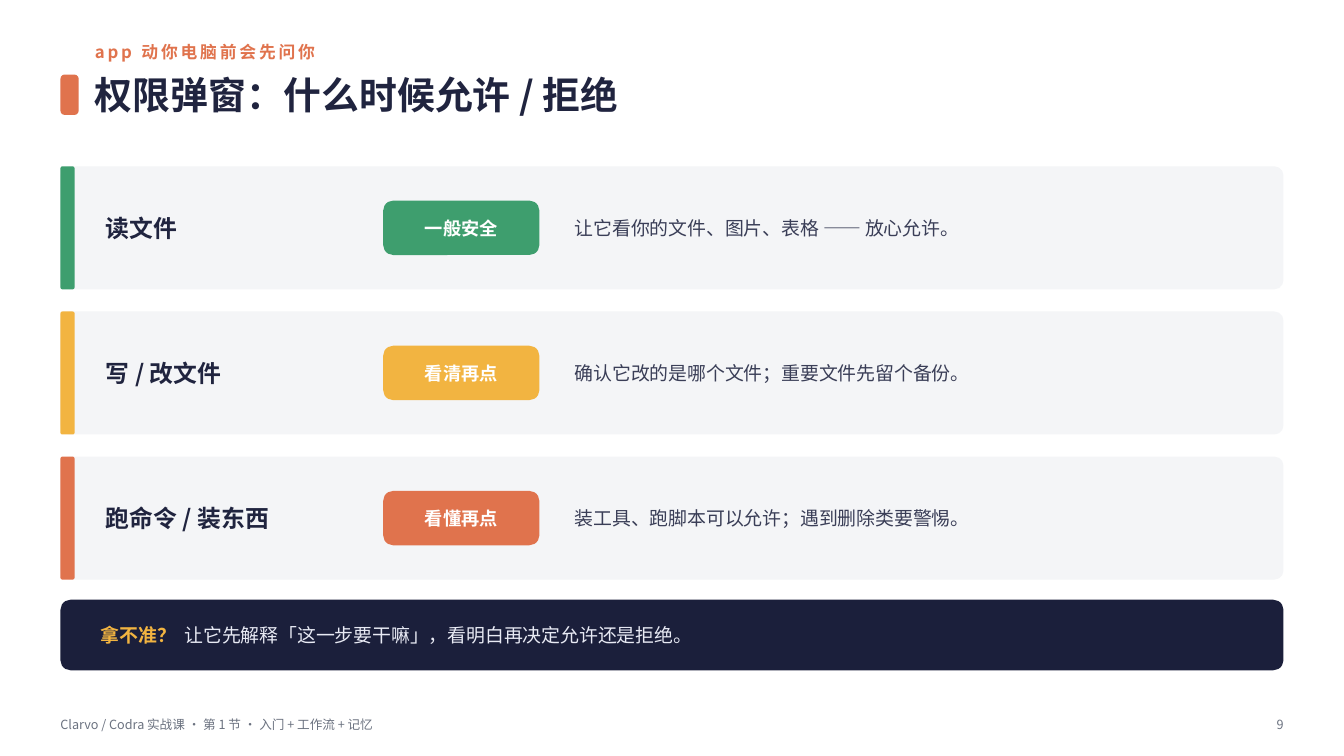
from lxml import etree
from pptx import Presentation
from pptx.dml.color import RGBColor
from pptx.enum.shapes import MSO_SHAPE
from pptx.enum.text import MSO_ANCHOR, PP_ALIGN
from pptx.oxml.ns import qn
from pptx.util import Inches, Pt

ROUNDED = MSO_SHAPE.ROUNDED_RECTANGLE
MIDDLE = MSO_ANCHOR.MIDDLE
LEFT, CENTER, RIGHT = PP_ALIGN.LEFT, PP_ALIGN.CENTER, PP_ALIGN.RIGHT

WHITE = RGBColor(0xFF, 0xFF, 0xFF)
INK = RGBColor(0x20, 0x24, 0x3F)
BODY = RGBColor(0x3A, 0x3E, 0x57)
MUTED = RGBColor(0x6B, 0x72, 0x80)
PANEL = RGBColor(0xF4, 0xF5, 0xF7)
NAVY = RGBColor(0x1B, 0x1F, 0x3B)
PALE = RGBColor(0xE8, 0xEA, 0xF4)
GREEN = RGBColor(0x3E, 0x9E, 0x6E)
AMBER = RGBColor(0xF2, 0xB4, 0x41)
ORANGE = RGBColor(0xE0, 0x73, 0x4D)

MARGIN = 0.6
CONTENT_WIDTH = 12.13
ROW_TOP, ROW_HEIGHT, ROW_PITCH = 1.65, 1.22, 1.44
BADGE_HEIGHT = 0.54

PERMISSIONS = [
    ("读文件", "一般安全", "让它看你的文件、图片、表格 —— 放心允许。", GREEN),
    ("写 / 改文件", "看清再点", "确认它改的是哪个文件；重要文件先留个备份。", AMBER),
    ("跑命令 / 装东西", "看懂再点", "装工具、跑脚本可以允许；遇到删除类要警惕。", ORANGE),
]


class SlideBuilder:
    font_name = "Noto Sans CJK SC"

    def __init__(self, slide):
        self.slide = slide

    def block(self, left, top, width, height, color, radius):
        shape = self.slide.shapes.add_shape(
            ROUNDED, Inches(left), Inches(top), Inches(width), Inches(height))
        shape.adjustments[0] = radius / min(width, height)
        shape.shadow.inherit = False
        shape.fill.solid()
        shape.fill.fore_color.rgb = color
        shape.line.fill.background()
        return shape

    def fill_text(self, shape, parts, size, bold=False, align=LEFT, spacing=0, tab=0):
        frame = shape.text_frame
        frame.word_wrap = True
        frame.vertical_anchor = MIDDLE
        frame.margin_left = frame.margin_right = 0
        frame.margin_top = frame.margin_bottom = 0
        paragraph = frame.paragraphs[0]
        paragraph.alignment = align
        if tab:
            stops = etree.SubElement(paragraph._p.get_or_add_pPr(), qn("a:tabLst"))
            etree.SubElement(stops, qn("a:tab"), pos=str(Inches(tab)), algn="l")
        font = paragraph.font
        font.name = self.font_name
        font.size = Pt(size)
        font.bold = bold
        if len(parts) == 1:
            font.color.rgb = parts[0][1]
        defaults = paragraph._p.pPr.find(qn("a:defRPr"))
        etree.SubElement(defaults, qn("a:ea"), typeface=self.font_name)
        if spacing:
            defaults.set("spc", str(spacing * 100))
        for words, color, *emphasis in parts:
            run = paragraph.add_run()
            run.text = words
            if len(parts) > 1:
                run.font.color.rgb = color
                run.font.bold = emphasis[0]

    def text(self, left, top, width, height, parts, size, **style):
        box = self.slide.shapes.add_textbox(
            Inches(left), Inches(top), Inches(width), Inches(height))
        self.fill_text(box, parts, size, **style)

    def permission(self, top, action, verdict, advice, color):
        self.block(MARGIN, top, CONTENT_WIDTH, ROW_HEIGHT, PANEL, 0.09)
        self.block(MARGIN, top, 0.14, ROW_HEIGHT, color, 0.02)
        self.text(1.05, top, 2.7, ROW_HEIGHT, [(action, INK)], 17, bold=True)
        badge_top = top + (ROW_HEIGHT - BADGE_HEIGHT) / 2
        badge = self.block(3.8, badge_top, 1.55, BADGE_HEIGHT, color, 0.1)
        self.fill_text(badge, [(verdict, WHITE)], 13, bold=True, align=CENTER)
        self.text(5.7, top, 6.73, ROW_HEIGHT, [(advice, BODY)], 13.5)


def main():
    deck = Presentation()
    deck.slide_width, deck.slide_height = Inches(13.33), Inches(7.5)
    page = SlideBuilder(deck.slides.add_slide(deck.slide_layouts[6]))

    page.text(0.94, 0.36, 11.79, 0.3, [("app 动你电脑前会先问你", ORANGE)], 12,
              bold=True, spacing=2)
    page.block(MARGIN, 0.74, 0.18, 0.4, ORANGE, 0.04)
    page.text(0.94, 0.64, 11.79, 0.6, [("权限弹窗：什么时候允许 / 拒绝", INK)], 27,
              bold=True)

    for index, permission in enumerate(PERMISSIONS):
        page.permission(ROW_TOP + index * ROW_PITCH, *permission)

    page.block(MARGIN, 5.95, CONTENT_WIDTH, 0.7, NAVY, 0.1)
    page.text(1, 5.95, 11.33, 0.7, [
        ("拿不准？\t", AMBER, True),
        ("让它先解释「这一步要干嘛」，看明白再决定允许还是拒绝。", PALE, False),
    ], 13.5, tab=0.83)

    page.text(MARGIN, 7.04, 9, 0.3,
              [("Clarvo / Codra 实战课 · 第 1 节 · 入门 + 工作流 + 记忆", MUTED)], 9)
    page.text(12.03, 7.04, 0.7, 0.3, [("9", MUTED)], 9, align=RIGHT)

    deck.save("out.pptx")


if __name__ == "__main__":
    main()
